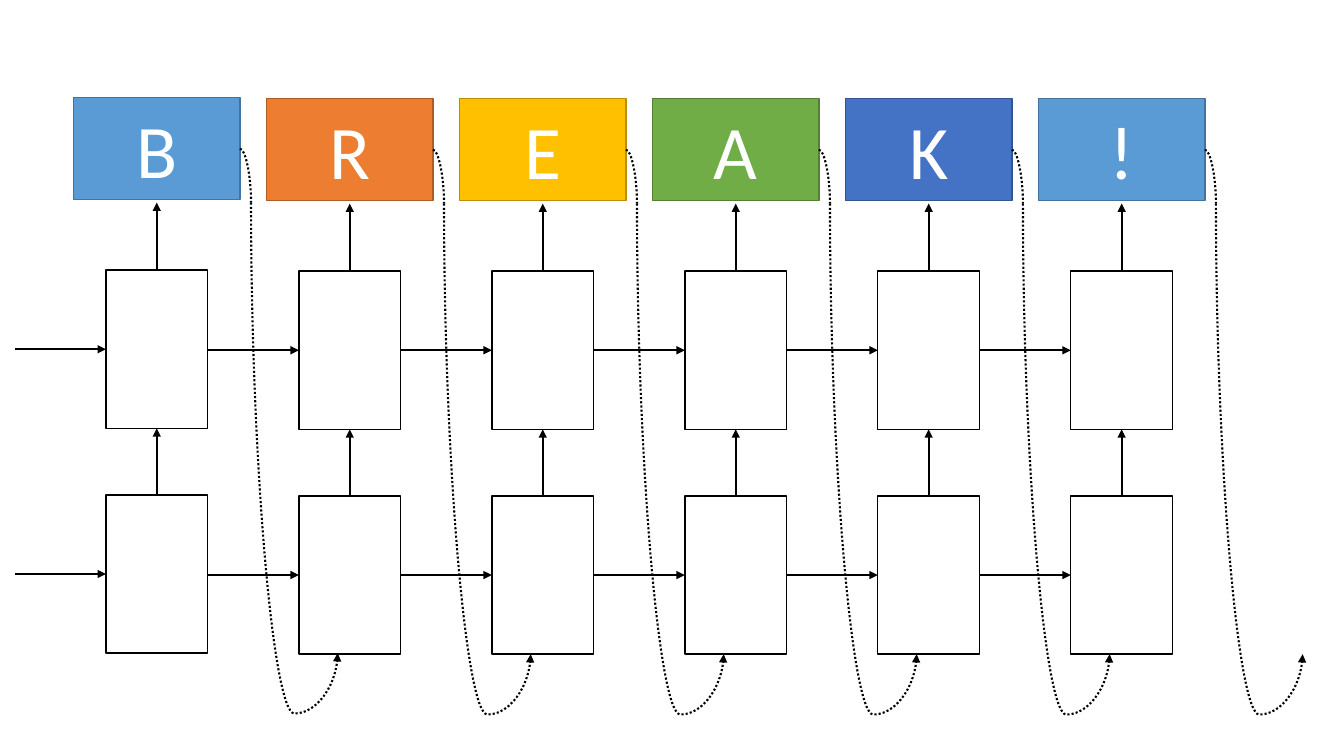
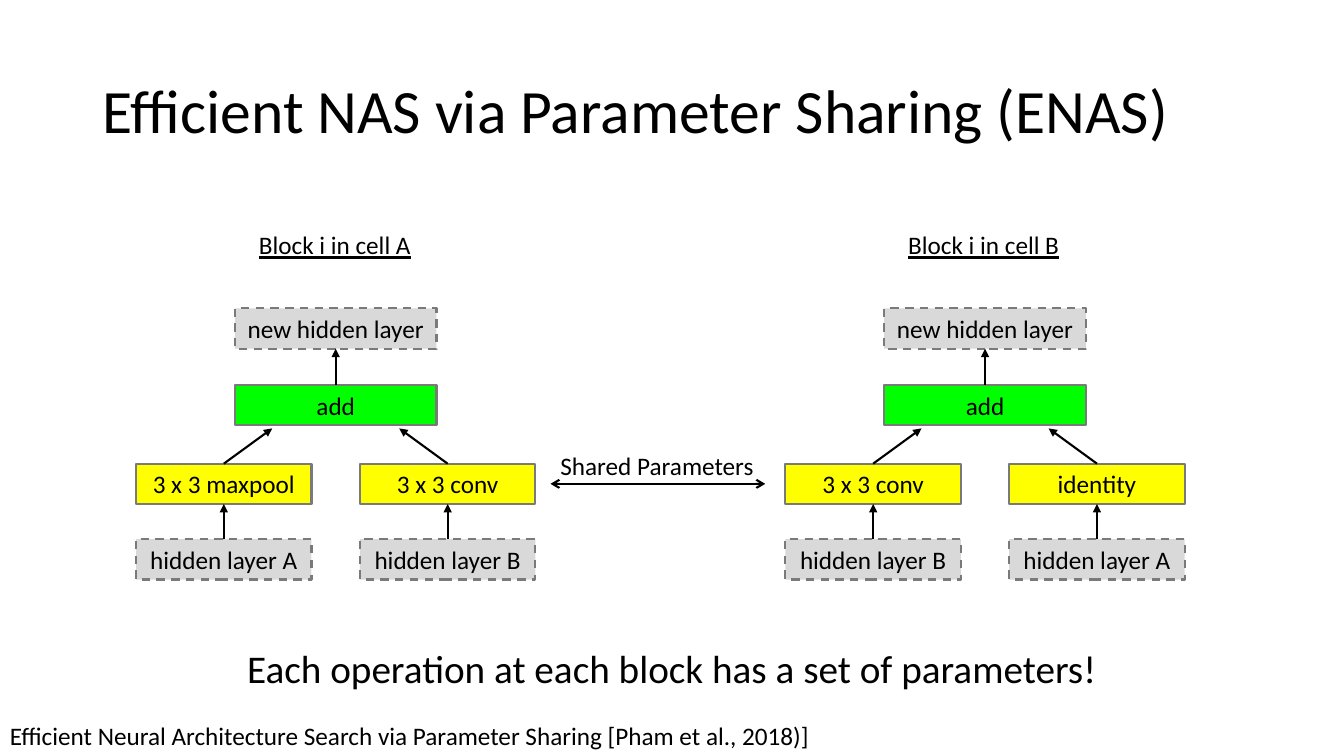
from pptx import Presentation
from pptx.dml.color import RGBColor
from pptx.enum.dml import MSO_LINE
from pptx.enum.shapes import MSO_CONNECTOR as LINK, MSO_SHAPE
from pptx.enum.text import MSO_ANCHOR as ANCHOR, PP_ALIGN as ALIGN
from pptx.oxml.ns import qn
from pptx.util import Inches, Pt
from lxml import etree

FONT = "Calibri"
COLORS = {
    "ink": "000000", "paper": "FFFFFF", "edge": "7A7A7A",
    "layer": "D9D9D9", "operation": "FFFF00", "add": "00FF00",
    "blue": "5B9BD5", "blue_edge": "43739E",
    "orange": "ED7D31", "orange_edge": "AF5C24",
    "gold": "FFC000", "gold_edge": "BD8E00",
    "green": "70AD47", "green_edge": "538035",
    "indigo": "4472C4", "indigo_edge": "325491",
}

# Recurrent network: one column per output letter
OUTPUTS = [("B", "blue"), ("R", "orange"), ("E", "gold"),
           ("A", "green"), ("K", "indigo"), ("!", "blue")]
FIRST_X, LAST_X = 1.05, 10.62
PITCH = (LAST_X - FIRST_X) / (len(OUTPUTS) - 1)
CELL_W, CELL_H = 1.01, 1.57
UPPER_Y, LOWER_Y = 2.68, 4.91
LETTER_W, LETTER_H, LETTER_Y = 1.65, 1.01, 0.97

# Block diagram: two blocks side by side
BLOCK_CENTERS = (3.33, 9.77)
BRANCH_OFFSET = 1.11
NODE_H = 0.4
NEW_LAYER_Y, ADD_Y, OPERATION_Y, INPUT_Y = 3.06, 3.82, 4.6, 5.35


def color(key):
    return RGBColor.from_string(COLORS[key])


# Text
def write(frame, text, size, ink="ink", align=ALIGN.LEFT, underline=False):
    frame.text = text
    paragraph = frame.paragraphs[0]
    paragraph.alignment = align
    font = paragraph.runs[0].font
    font.name, font.size = FONT, Pt(size)
    font.color.rgb = color(ink)
    if underline:
        font.underline = True
    return paragraph


def add_label(shapes, box, text, size=18, wrap=True, anchor=ANCHOR.TOP, **style):
    frame = shapes.add_textbox(*map(Inches, box)).text_frame
    frame.word_wrap = wrap
    frame.vertical_anchor = anchor
    return write(frame, text, size, **style)


# Boxes
def add_box(shapes, box, fill, edge, width=1, dashed=False, text="", size=18, ink="ink"):
    rect = shapes.add_shape(MSO_SHAPE.RECTANGLE, *map(Inches, box))
    rect.shadow.inherit = False
    rect.fill.solid()
    rect.fill.fore_color.rgb = color(fill)
    rect.line.color.rgb = color(edge)
    rect.line.width = Pt(width)
    if dashed:
        rect.line.dash_style = MSO_LINE.DASH
    if text:
        rect.text_frame.vertical_anchor = ANCHOR.MIDDLE
        write(rect.text_frame, text, size, ink, ALIGN.CENTER)


# Lines and arrows
def add_link(shapes, start, end, kind=LINK.STRAIGHT, head=None, tail="triangle", dotted=False):
    link = shapes.add_connector(kind, *map(Inches, (*start, *end)))
    link.line.color.rgb = color("ink")
    link.line.width = Pt(1.5)
    if dotted:
        link.line.dash_style = MSO_LINE.ROUND_DOT
    properties = link.element.spPr
    outline = properties.find(qn("a:ln"))
    for tag, tip in (("a:headEnd", head), ("a:tailEnd", tail)):
        if tip:
            etree.SubElement(outline, qn(tag)).set("type", tip)
    etree.SubElement(properties, qn("a:effectLst"))
    return link


def add_feedback(shapes, start, turn, end):
    """Dotted path from a letter, down and round to the next column's input."""
    shoulder = add_link(shapes, start, turn, LINK.CURVE, tail=None, dotted=True)
    shoulder.element.spPr.find(qn("a:prstGeom")).set("prst", "curvedConnector2")

    # The long curve is laid out horizontally, then turned a quarter
    mid_x, mid_y = (turn[0] + end[0]) / 2, (turn[1] + end[1]) / 2
    half_run, half_rise = (end[1] - turn[1]) / 2, (end[0] - turn[0]) / 2
    curve = add_link(shapes, (mid_x + half_run, mid_y - half_rise),
                     (mid_x - half_run, mid_y + half_rise), LINK.CURVE, dotted=True)
    properties = curve.element.spPr
    properties.find(qn("a:xfrm")).set("rot", "16200000")
    geometry = properties.find(qn("a:prstGeom"))
    adjustments = geometry.find(qn("a:avLst"))
    if adjustments is None:
        adjustments = etree.SubElement(geometry, qn("a:avLst"))
    bend = etree.SubElement(adjustments, qn("a:gd"))
    bend.set("name", "adj1")
    bend.set("fmla", "val 113400")


# Slide 1
def add_column(shapes, x, drop, letter, hue):
    upper, lower, letter_y = UPPER_Y + drop, LOWER_Y + drop, LETTER_Y + drop
    center = x + CELL_W / 2
    letter_x = center - LETTER_W / 2
    for y in (upper, lower):
        add_box(shapes, (x, y, CELL_W, CELL_H), "paper", "ink")
        add_link(shapes, (x + CELL_W - PITCH, y + CELL_H / 2), (x, y + CELL_H / 2))
    add_box(shapes, (letter_x, letter_y, LETTER_W, LETTER_H), hue, hue + "_edge",
            text=letter, size=54, ink="paper")
    add_link(shapes, (center, lower), (center, upper + CELL_H))
    letter_foot = letter_y + LETTER_H + 0.03
    add_link(shapes, (center, upper), (center, letter_foot))
    right = letter_x + LETTER_W
    add_feedback(shapes, (right, letter_y + LETTER_H / 2), (right + 0.11, letter_foot),
                 (right + 0.97, lower + CELL_H))


def build_network(slide):
    for index, (letter, hue) in enumerate(OUTPUTS):
        column = slide.shapes.add_group_shape().shapes
        drop = 0.01 if index else 0
        add_column(column, FIRST_X + index * PITCH, drop, letter, hue)


# Slide 2
def add_node(shapes, center, y, width, fill, text):
    add_box(shapes, (center - width / 2, y, width, NODE_H), fill, "edge", 1.5,
            dashed=fill == "layer", text=text)


def add_block(shapes, center, branches):
    add_node(shapes, center, NEW_LAYER_Y, 2, "layer", "new hidden layer")
    add_node(shapes, center, ADD_Y, 2, "add", "add")
    add_link(shapes, (center, ADD_Y), (center, NEW_LAYER_Y + NODE_H))
    for side, (operation, source) in zip((-1, 1), branches):
        x = center + side * BRANCH_OFFSET
        add_node(shapes, x, INPUT_Y, 1.74, "layer", source)
        add_node(shapes, x, OPERATION_Y, 1.74, "operation", operation)
        add_link(shapes, (x, INPUT_Y), (x, OPERATION_Y + NODE_H))
        add_link(shapes, (x, OPERATION_Y), (center + side * 0.63, ADD_Y + NODE_H + 0.03))


def build_sharing(slide):
    shapes = slide.shapes
    title = add_label(shapes, (0.92, 0.4, 11.5, 1.45),
                      "Efficient NAS via Parameter Sharing (ENAS)", 44, anchor=ANCHOR.MIDDLE)
    title.line_spacing = 0.9

    blocks = [
        ("Block i in cell A", [("3 x 3 maxpool", "hidden layer A"),
                               ("3 x 3 conv", "hidden layer B")]),
        ("Block i in cell B", [("3 x 3 conv", "hidden layer B"),
                               ("identity", "hidden layer A")]),
    ]
    for center, (heading, branches) in zip(BLOCK_CENTERS, blocks):
        add_block(shapes.add_group_shape().shapes, center, branches)
        add_label(shapes, (center - 0.86, 2.23, 1.73, 0.4), heading, underline=True)

    shared = shapes.add_group_shape().shapes
    add_link(shared, (5.46, 4.8), (7.59, 4.8), head="arrow", tail="arrow")
    add_label(shared, (5.46, 4.42, 2.14, 0.4), "Shared Parameters", wrap=False)

    add_label(shapes, (0.75, 6.34, 11.82, 0.57),
              "Each operation at each block has a set of parameters!", 28, align=ALIGN.CENTER)
    add_label(shapes, (0, 7.1, 8.36, 0.4),
              "Efficient Neural Architecture Search via Parameter Sharing [Pham et al., 2018)]",
              wrap=False)


def main():
    deck = Presentation()
    deck.slide_width, deck.slide_height = Inches(13.33), Inches(7.5)
    blank = deck.slide_layouts[6]
    for build in (build_network, build_sharing):
        build(deck.slides.add_slide(blank))
    deck.save("out.pptx")


if __name__ == "__main__":
    main()
